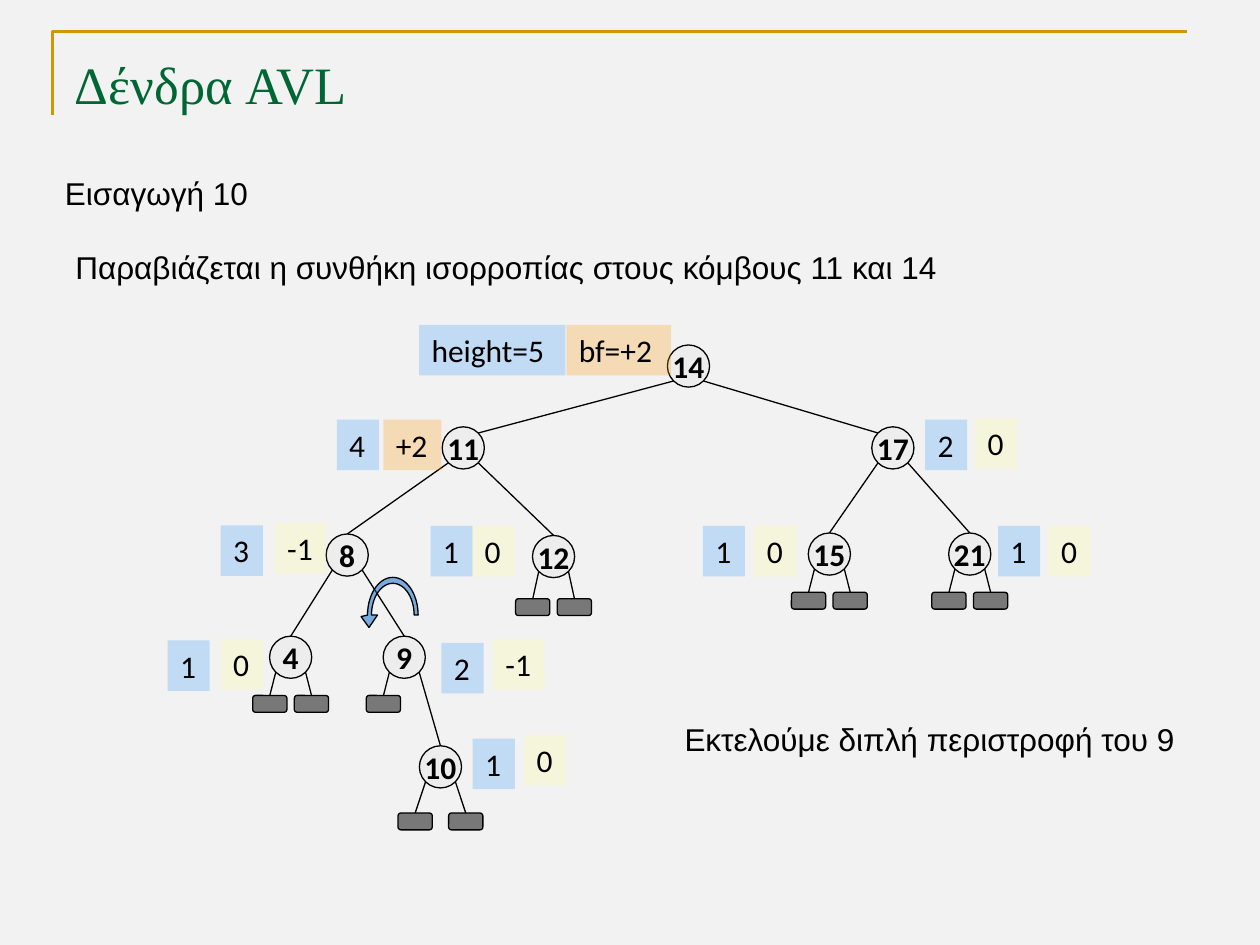
import math
from dataclasses import dataclass

from lxml import etree
from pptx import Presentation
from pptx import util as u
from pptx.dml.color import RGBColor
from pptx.enum import shapes, text
from pptx.oxml.ns import qn

BLACK = RGBColor(0x00, 0x00, 0x00)
GREEN = RGBColor(0x00, 0x66, 0x33)
GOLD = RGBColor(0xCC, 0x99, 0x00)
PAPER = RGBColor(0xF2, 0xF2, 0xF2)
SILVER = RGBColor(0xEA, 0xEA, 0xEA)
SKY = RGBColor(0x33, 0x99, 0xFF)
YELLOW = RGBColor(0xFF, 0xFF, 0x99)
ORANGE = RGBColor(0xFF, 0x99, 0x00)
BLUE = RGBColor(0x00, 0x66, 0xCC)

DIAMETER = 0.85
RADIUS = DIAMETER / 2
DIAGONAL = 0.3
LEAF_WIDTH, LEAF_HEIGHT = 0.69, 0.34
LINE_HEIGHT = 1.02


@dataclass
class Node:
    x: float
    y: float
    height: tuple
    balance: tuple
    leaves: tuple = ()
    leaf_gap: tuple = (0.42, 0.77)


NODES = {
    "14": Node(10.88, 1.38, ("height=5", -5.43, -0.83, 2.95), ("bf=+2", -2.46, -0.83, 2.11)),
    "11": Node(6.34, 3.03, ("4", -2.55, -0.57, 0.85), ("+2", -1.61, -0.57, 1.17)),
    "17": Node(15, 3.03, ("2", 0.65, -0.57, 0.85), ("0", 1.66, -0.6, 0.85)),
    "8": Node(4, 5.19, ("3", -2.55, -0.6, 0.85), ("-1", -1.46, -0.65, 1.04)),
    "12": Node(8.16, 5.22, ("1", -2.48, -0.62, 0.85), ("0", -1.64, -0.62, 0.85), (-1, 1), (0.42, 0.85)),
    "15": Node(13.72, 5.17, ("1", -2.55, -0.57, 0.85), ("0", -1.51, -0.57, 0.85), (-1, 1)),
    "21": Node(16.55, 5.17, ("1", 0.57, -0.57, 0.85), ("0", 1.59, -0.57, 0.85), (-1, 1)),
    "4": Node(2.86, 7.25, ("1", -2.48, -0.34, 0.85), ("0", -1.41, -0.37, 0.85), (-1, 1)),
    "9": Node(5.15, 7.25, ("2", 0.75, -0.29, 0.85), ("-1", 1.79, -0.37, 1.04), (-1,)),
    "10": Node(5.88, 9.46, ("1", 0.65, -0.57, 0.85), ("0", 1.69, -0.65, 0.85), (-1, 1), (0.51, 0.93)),
}
CHILDREN = {"14": ("11", "17"), "11": ("8", "12"), "17": ("15", "21"), "8": ("4", "9"), "9": ("10",)}


def paint(shape, color, opacity):
    shape.fill.solid()
    shape.fill.fore_color.rgb = color
    color_node = shape.fill._xPr.find(qn("a:solidFill"))[0]
    etree.SubElement(color_node, qn("a:alpha"), val=str(opacity * 1000))


def outline(shape, color=BLACK, width=0.75):
    shape.line.color.rgb = color
    shape.line.width = u.Pt(width)


def write(shape, words, size=18, font="Calibri", color=BLACK, bold=False, wrap=False,
          grow=True, align=text.PP_ALIGN.LEFT, anchor=text.MSO_ANCHOR.TOP):
    frame = shape.text_frame
    frame.word_wrap = wrap
    frame.auto_size = text.MSO_AUTO_SIZE.SHAPE_TO_FIT_TEXT if grow else text.MSO_AUTO_SIZE.NONE
    frame.vertical_anchor = anchor
    para = frame.paragraphs[0]
    para.alignment = align
    span = para.add_run()
    span.text = words
    span.font.size = u.Pt(size)
    span.font.name = font
    span.font.color.rgb = color
    span.font.bold = bold


def add_preset(page, kind, left, top, width, height):
    shape = page.shapes.add_shape(kind, u.Cm(left), u.Cm(top), u.Cm(width), u.Cm(height))
    shape.shadow.inherit = False
    return shape


def add_outline(page, points, close):
    points = [(u.Cm(x), u.Cm(y)) for x, y in points]
    builder = page.shapes.build_freeform(*points[0])
    builder.add_line_segments(points[1:], close=close)
    shape = builder.convert_to_shape()
    shape.shadow.inherit = False
    return shape


def add_edge(page, *ends):
    edge = page.shapes.add_connector(shapes.MSO_CONNECTOR.STRAIGHT, *(u.Cm(end) for end in ends))
    outline(edge)
    etree.SubElement(edge._element.spPr, qn("a:effectLst"))


def add_statement(page, left, top, width, words):
    box = page.shapes.add_textbox(u.Cm(left), u.Cm(top), u.Cm(width), u.Cm(LINE_HEIGHT))
    write(box, words, font="Arial")


def add_title(page, left, top, width, height):
    corner = add_outline(page, [(left, top + height), (left, top), (left + width, top)], False)
    corner.fill.background()
    outline(corner, GOLD, 1.5)
    box = page.shapes.add_textbox(u.Cm(left + 0.2), u.Cm(top + 0.13), u.Cm(width), u.Cm(1.35))
    write(box, "Δένδρα AVL", size=30, font="Times New Roman", color=GREEN, wrap=True, grow=False)
    box.text_frame.margin_top = u.Cm(0.28)


def add_label(page, x, y, label, color):
    words, shift, drop, width = label
    box = add_preset(page, shapes.MSO_SHAPE.RECTANGLE, x + shift, y + drop, width, LINE_HEIGHT)
    paint(box, color, 25)
    box.line.fill.background()
    write(box, words, wrap="=" in words)


def add_node(page, left, top, key):
    node = NODES[key]
    x, y = left + node.x, top + node.y
    circle = add_preset(page, shapes.MSO_SHAPE.OVAL, x - RADIUS, y - RADIUS, DIAMETER, DIAMETER)
    paint(circle, SILVER, 60)
    outline(circle)
    write(circle, key, bold=True, grow=False, align=text.PP_ALIGN.CENTER,
          anchor=text.MSO_ANCHOR.MIDDLE)
    shift, drop = node.leaf_gap
    for side in node.leaves:
        middle = x + side * shift
        leaf = add_preset(page, shapes.MSO_SHAPE.ROUNDED_RECTANGLE, middle - LEAF_WIDTH / 2,
                          y + drop, LEAF_WIDTH, LEAF_HEIGHT)
        paint(leaf, BLACK, 50)
        outline(leaf)
        add_edge(page, middle, y + drop, x + side * DIAGONAL, y + DIAGONAL)
    add_label(page, x, y, node.height, SKY)
    add_label(page, x, y, node.balance, ORANGE if "+" in node.balance[0] else YELLOW)


def add_rotation(page, x, y):
    angles = [math.radians(degrees) for degrees in range(0, 181, 6)]
    outer = [(0.51 * math.cos(a), -0.76 * math.sin(a)) for a in angles]
    inner = [(0.43 * math.cos(a), -0.64 * math.sin(a)) for a in reversed(angles)]
    head = [(-0.64, 0.03), (-0.48, 0.25), (-0.31, 0)]
    arrow = add_outline(page, [(x + dx, y + dy) for dx, dy in outer + head + inner], True)
    paint(arrow, BLUE, 50)
    outline(arrow)


def add_tree(page, left, top):
    for key, children in CHILDREN.items():
        parent = NODES[key]
        for child in (NODES[name] for name in children):
            side = math.copysign(1, child.x - parent.x)
            shift, rise = (side * DIAGONAL, DIAGONAL) if key == "14" else (0, RADIUS)
            add_edge(page, left + child.x - shift, top + child.y - rise,
                     left + parent.x + side * DIAGONAL, top + parent.y + DIAGONAL)
    for key in NODES:
        add_node(page, left, top, key)
    add_rotation(page, left + 4.92, top + 6.4)


def main():
    deck = Presentation()
    deck.slide_width, deck.slide_height = u.Cm(25.4), u.Cm(19.05)
    page = deck.slides.add_slide(deck.slide_layouts[6])
    page.background.fill.solid()
    page.background.fill.fore_color.rgb = PAPER
    add_title(page, 1.06, 0.63, 22.86, 1.69)
    add_statement(page, 1.06, 3.39, 4.23, "Εισαγωγή 10")
    add_statement(page, 1.27, 4.87, 18.2, "Παραβιάζεται η συνθήκη ισορροπίας στους κόμβους 11 και 14")
    add_tree(page, 3, 6)
    add_statement(page, 13.55, 14.4, 10.5, "Εκτελούμε διπλή περιστροφή του 9")
    deck.save("out.pptx")


if __name__ == "__main__":
    main()
